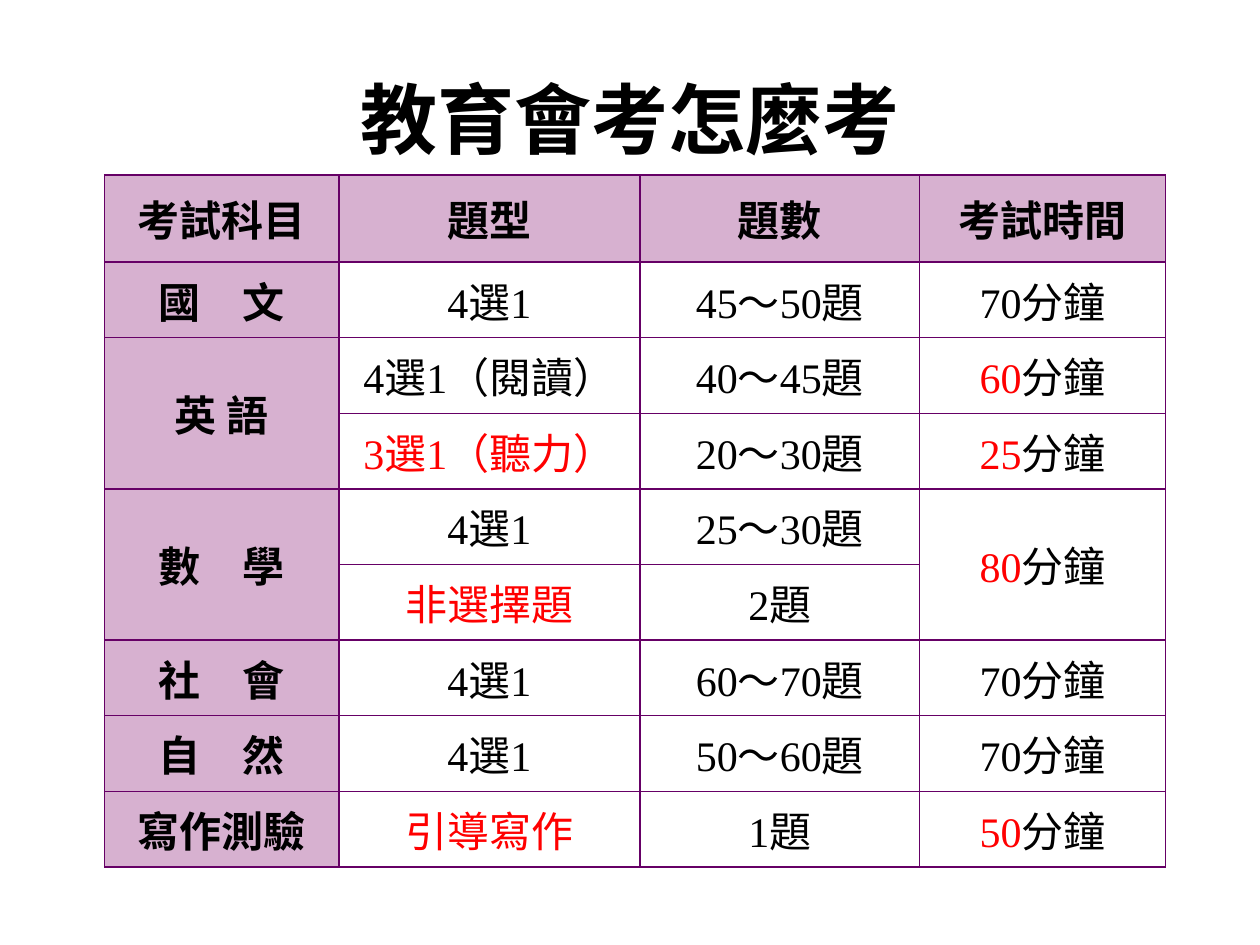
from lxml.etree import SubElement
from pptx import Presentation
from pptx.dml.color import RGBColor
from pptx.enum.text import MSO_ANCHOR as Anchor, PP_ALIGN as Align
from pptx.oxml import parse_xml
from pptx.oxml.ns import nsdecls, qn
from pptx.util import Inches, Pt

WIDTH, HEIGHT = 10, 7.5
SANS, SERIF = "Noto Sans CJK SC", "Times New Roman"
BLACK, RED, PURPLE, LILAC = "000000", "FF0000", "660066", "D7B1D0"

# Text between asterisks is red; None continues the cell above.
EXAM_ROWS = [
    ["考試科目", "題型", "題數", "考試時間"],
    ["國　文", "4選1", "45～50題", "70分鐘"],
    ["英 語", "4選1（閱讀）", "40～45題", "*60*分鐘"],
    [None, "*3選1（聽力）*", "20～30題", "*25*分鐘"],
    ["數　學", "4選1", "25～30題", "*80*分鐘"],
    [None, "*非選擇題*", "2題", None],
    ["社　會", "4選1", "60～70題", "70分鐘"],
    ["自　然", "4選1", "50～60題", "70分鐘"],
    ["寫作測驗", "*引導寫作*", "1題", "*50*分鐘"],
]


def color(hex_value):
    return RGBColor.from_string(hex_value)


def write(frame, text, size=24, font=SERIF, bold=False):
    """Write one centred line, with the marked parts in red."""
    para = frame.paragraphs[0]
    para.alignment = Align.CENTER
    for index, part in enumerate(text.split("*")):
        if not part:
            continue
        span = para.add_run()
        span.text = part
        span.font.size = Pt(size)
        span.font.bold = bold
        span.font.name = font
        span.font.color.rgb = color(RED if index % 2 else BLACK)
        SubElement(span.font._element, qn("a:ea")).set("typeface", SANS)


class Page:
    """The current slide and its style; lengths are shares of the slide."""

    def __init__(self, deck):
        self.slide = deck.slides.add_slide(deck.slide_layouts[6])
        self.inset = Inches(0.02)
        self.line_width = Pt(1)

    def place(self, left, top, width, height):
        return (Inches(left * WIDTH), Inches(top * HEIGHT),
                Inches(width * WIDTH), Inches(height * HEIGHT))

    def title(self, text, *area):
        box = self.slide.shapes.add_textbox(*self.place(*area))
        frame = box.text_frame
        frame.word_wrap = True
        frame.vertical_anchor = Anchor.MIDDLE
        write(frame, text, size=44, font=SANS, bold=True)

    def border(self, cell):
        properties = cell._tc.get_or_add_tcPr()
        for index, side in enumerate(("lnL", "lnR", "lnT", "lnB")):
            properties.insert(index, parse_xml(
                f'<a:{side} {nsdecls("a")} w="{self.line_width}"><a:solidFill>'
                f'<a:srgbClr val="{PURPLE}"/></a:solidFill></a:{side}>'))

    def cell(self, cell, text, heading):
        cell.margin_left = cell.margin_right = self.inset
        cell.margin_top = cell.margin_bottom = self.inset
        cell.vertical_anchor = Anchor.MIDDLE
        if heading:
            cell.fill.solid()
            cell.fill.fore_color.rgb = color(LILAC)
        else:
            cell.fill.background()
        self.border(cell)
        if text:
            write(cell.text_frame, text, bold=heading)

    def table(self, rows, columns, heights, left, top):
        area = self.place(left, top, sum(columns), sum(heights))
        grid = self.slide.shapes.add_table(len(rows), len(columns), *area).table
        for column, share in zip(grid.columns, columns):
            column.width = Inches(share * WIDTH)
        for row, share in zip(grid.rows, heights):
            row.height = Inches(share * HEIGHT)
        for r, texts in enumerate(rows):
            for c, text in enumerate(texts):
                self.cell(grid.cell(r, c), text, heading=r == 0 or c == 0)
                if text is None:
                    grid.cell(r - 1, c).merge(grid.cell(r, c))


def main():
    deck = Presentation()
    deck.slide_width, deck.slide_height = Inches(WIDTH), Inches(HEIGHT)
    page = Page(deck)

    # Heading
    page.title("教育會考怎麼考", 0.05, 0.04, 0.9, 0.17)

    # Exam table: one taller header row over equal rows
    columns = [share / WIDTH for share in (1.86, 2.39, 2.22, 1.95)]
    heights = [0.69 / HEIGHT] + [0.6 / HEIGHT] * (len(EXAM_ROWS) - 1)
    page.table(EXAM_ROWS, columns, heights, 0.83 / WIDTH, 1.39 / HEIGHT)

    deck.save("out.pptx")


if __name__ == "__main__":
    main()
